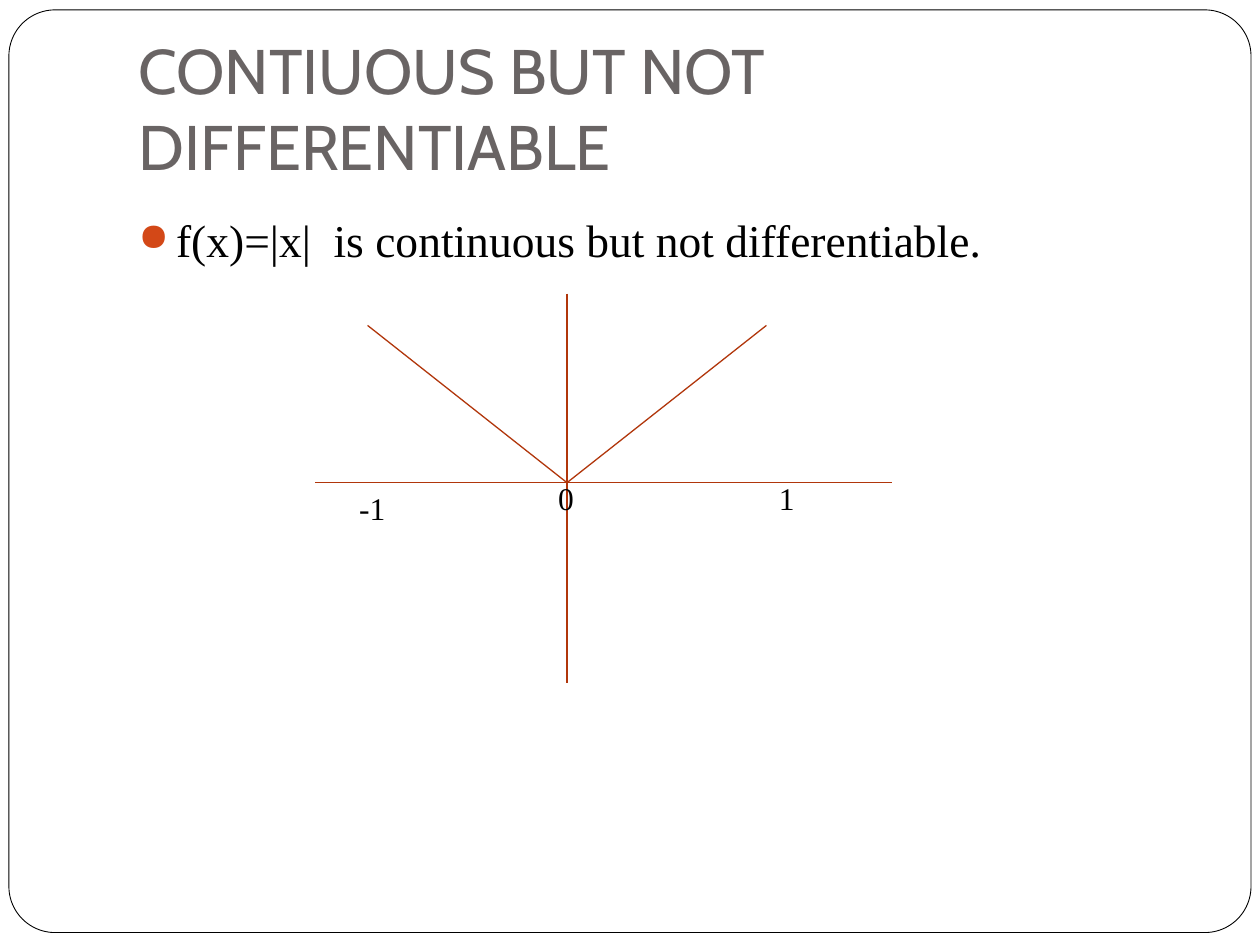
"""Build a slide that shows f(x)=|x| as continuous but not differentiable at zero."""
from dataclasses import dataclass

from lxml.etree import SubElement
from pptx import Presentation
from pptx.dml.color import RGBColor as Rgb
from pptx.enum.shapes import MSO_CONNECTOR as Connector, MSO_SHAPE as Shape
from pptx.enum.text import MSO_ANCHOR as Anchor, MSO_AUTO_SIZE as AutoSize, PP_ALIGN as Align
from pptx.oxml.ns import qn
from pptx.util import Cm, Pt


@dataclass(frozen=True)
class Theme:
    heading_font: str = "Cabin"
    body_font: str = "Times New Roman"
    heading: Rgb = Rgb(0x69, 0x64, 0x64)
    ink: Rgb = Rgb(0, 0, 0)
    bullet: str = "D34817"
    graph: Rgb = Rgb(0xB1, 0x36, 0x0B)
    heading_size: Pt = Pt(36)
    statement_size: Pt = Pt(26)
    label_size: Pt = Pt(18)
    frame_width: Pt = Pt(0.5)
    graph_width: Pt = Pt(0.75)


def set_text(shape, text, font_format, frame_format):
    frame = shape.text_frame
    frame.text = text
    for name, value in frame_format.items():
        setattr(frame, name, value)
    paragraph = frame.paragraphs[0]
    paragraph.alignment = Align.LEFT
    font = paragraph.runs[0].font
    font.color.rgb = font_format["color"]
    for name in ("name", "size"):
        setattr(font, name, font_format[name])
    return paragraph


theme = Theme()
deck = Presentation()
deck.slide_width, deck.slide_height = Cm(25.4), Cm(19.05)
slide = deck.slides.add_slide(deck.slide_layouts[5])
shapes = slide.shapes

border = shapes.add_shape(Shape.ROUNDED_RECTANGLE, Cm(0.18), Cm(0.2), Cm(25.04), Cm(18.6))
border.adjustments[0] = 0.05
border.shadow.inherit = False
border.fill.background()
border.line.color.rgb = theme.ink
border.line.width = theme.frame_width

heading = shapes.title
heading_place = {"left": Cm(2.54), "top": Cm(0.76), "width": Cm(21.59), "height": Cm(3.18)}
for name, value in heading_place.items():
    setattr(heading, name, value)
set_text(
    heading,
    "CONTIUOUS BUT NOT DIFFERENTIABLE",
    {"name": theme.heading_font, "size": theme.heading_size, "color": theme.heading},
    {
        "word_wrap": True,
        "auto_size": AutoSize.NONE,
        "vertical_anchor": Anchor.BOTTOM,
        "margin_left": Cm(0.25),
        "margin_right": Cm(0.25),
        "margin_top": Cm(0.13),
        "margin_bottom": Cm(0.25),
    },
)

statement = shapes.add_textbox(Cm(2.54), Cm(4.15), Cm(21.59), Cm(12.7))
claim = set_text(
    statement,
    "f(x)=|x|  is continuous but not differentiable.",
    {"name": theme.body_font, "size": theme.statement_size, "color": theme.ink},
    {"word_wrap": True},
)
bullet_format = claim._p.get_or_add_pPr()
for name, value in {"marL": Cm(0.76), "indent": Cm(-0.76)}.items():
    bullet_format.set(name, str(int(value)))
bullet_color = SubElement(bullet_format, qn("a:buClr"))
SubElement(bullet_color, qn("a:srgbClr"), val=theme.bullet)
SubElement(bullet_format, qn("a:buSzPct"), val="85000")
SubElement(bullet_format, qn("a:buChar"), char="●")

origin_x, origin_y = 11.43, 9.73
arm_width, arm_top = 4.02, 6.56
strokes = [
    (6.35, origin_y, 17.99, origin_y),
    (origin_x, 5.92, origin_x, 13.76),
    (origin_x - arm_width, arm_top, origin_x, origin_y),
    (origin_x, origin_y, origin_x + arm_width, arm_top),
]
for stroke in strokes:
    segment = shapes.add_connector(Connector.STRAIGHT, *map(Cm, stroke))
    segment.line.color.rgb = theme.graph
    segment.line.width = theme.graph_width
    SubElement(segment._element.spPr, qn("a:effectLst"))

tick_labels = [
    ("-1", 6.99, 9.73, 1.27, True),
    ("1", 15.45, 9.53, 0.81, False),
    ("0", 11.0, 9.53, 0.81, False),
]
for text, left, top, width, wraps in tick_labels:
    set_text(
        shapes.add_textbox(Cm(left), Cm(top), Cm(width), Cm(1.02)),
        text,
        {"name": theme.body_font, "size": theme.label_size, "color": theme.ink},
        {"word_wrap": wraps, "auto_size": AutoSize.SHAPE_TO_FIT_TEXT},
    )

deck.save("out.pptx")
